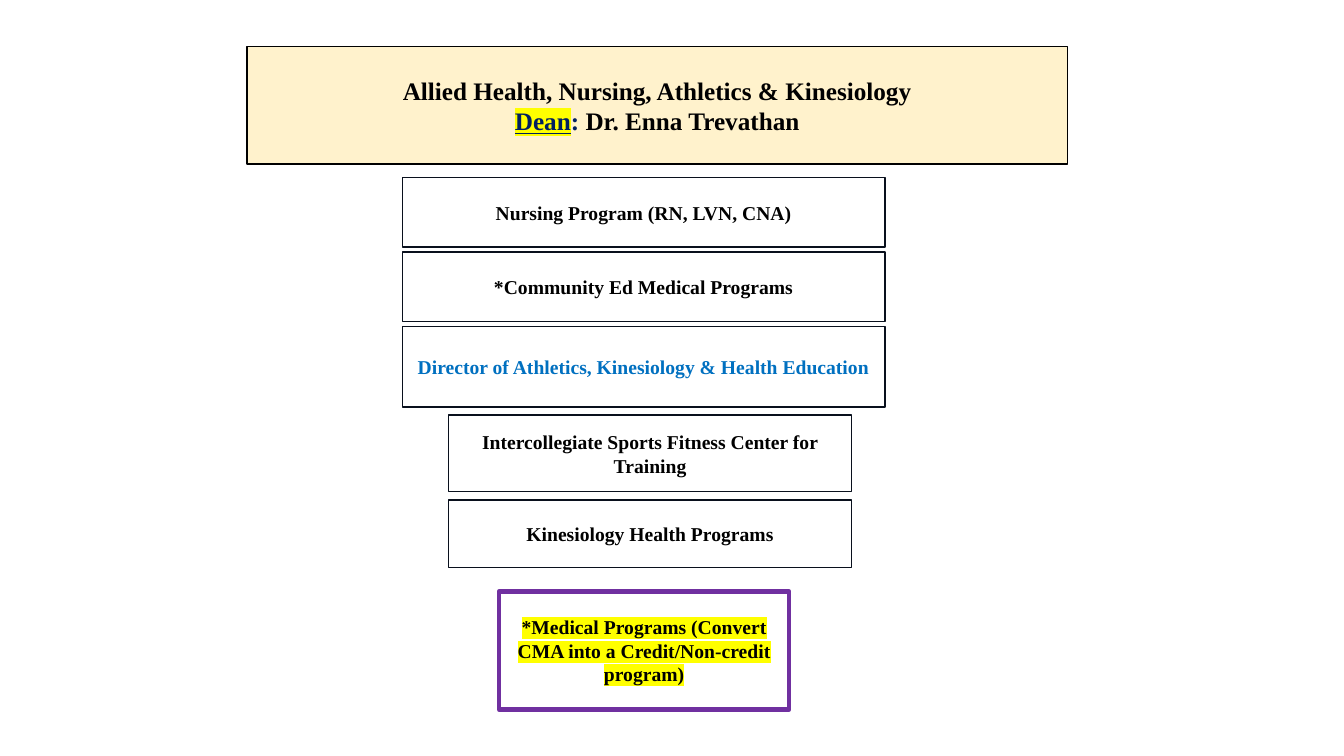
import pptx
import pptx.util
import pptx.dml.color
import pptx.enum.shapes
import pptx.enum.text
import pptx.oxml
import pptx.oxml.ns

Pt = pptx.util.Pt
RGBColor = pptx.dml.color.RGBColor

BLACK = RGBColor(0, 0, 0)
WHITE = RGBColor(255, 255, 255)
CREAM = RGBColor(0xFF, 0xF2, 0xCC)
NAVY = RGBColor(0x00, 0x20, 0x60)
BLUE = RGBColor(0x00, 0x70, 0xC0)
PURPLE = RGBColor(0x70, 0x30, 0xA0)
INK = RGBColor(0x09, 0x10, 0x1D)
YELLOW = RGBColor(0xFF, 0xFF, 0x00)

HEADER = [
    [("Allied Health, Nursing, Athletics & Kinesiology", BLACK, False)],
    [("Dean", NAVY, True), (":", NAVY, False), (" Dr. Enna Trevathan", BLACK, False)],
]
PROGRAMS = [
    ("Nursing Program (RN, LVN, CNA)", "area", 126.7, 49.7, BLACK),
    ("*Community Ed Medical Programs", "area", 180, 49.7, BLACK),
    ("Director of Athletics, Kinesiology & Health Education", "area", 233.3, 57.6, BLUE),
    ("Intercollegiate Sports Fitness Center for Training", "unit", 296.6, 54.7, BLACK),
    ("Kinesiology Health Programs", "unit", 357.1, 48.2, BLACK),
    ("*Medical Programs (Convert CMA into a Credit/Non-credit program)",
     "proposal", 422.6, 84.2, BLACK),
]
LEVELS = {
    "header": (176.4, 586.1, CREAM, BLACK, 1),
    "area": (287.3, 344.9, WHITE, INK, 1),
    "unit": (320.4, 288, WHITE, INK, 1),
    "proposal": (356.4, 207.4, WHITE, PURPLE, 3),
}


def set_all(target, values):
    for name, value in values.items():
        setattr(target, name, value)


def highlight(span):
    mark = pptx.oxml.parse_xml(
        f'<a:highlight {pptx.oxml.ns.nsdecls("a")}><a:srgbClr val="{YELLOW}"/></a:highlight>')
    span.font.fill._xPr.find(pptx.oxml.ns.qn("a:solidFill")).addnext(mark)


def format_box(box, level, top, height, lines, size):
    left, width, fill, edge, weight = LEVELS[level]
    set_all(box, {"left": Pt(left), "top": Pt(top), "width": Pt(width), "height": Pt(height)})
    box.fill.solid()
    box.fill.fore_color.rgb = fill
    box.line.color.rgb = edge
    box.line.width = Pt(weight)
    frame = box.text_frame
    set_all(frame, {"word_wrap": True,
                    "auto_size": pptx.enum.text.MSO_AUTO_SIZE.NONE,
                    "vertical_anchor": pptx.enum.text.MSO_ANCHOR.MIDDLE})
    for index, line in enumerate(lines):
        para = frame.add_paragraph() if index else frame.paragraphs[0]
        para.alignment = pptx.enum.text.PP_ALIGN.CENTER
        for text, color, marked, *underline in line:
            span = para.add_run()
            span.text = text
            set_all(span.font, {"name": "Times New Roman", "size": Pt(size), "bold": True,
                                "underline": marked and level == "header"})
            span.font.color.rgb = color
            if marked:
                highlight(span)


deck = pptx.Presentation()
deck.slide_width, deck.slide_height = Pt(960), Pt(540)
page = deck.slides.add_slide(deck.slide_layouts[5])
format_box(page.shapes.title, "header", 33.1, 84.2, HEADER, 18)
for text, level, top, height, color in PROGRAMS:
    box = page.shapes.add_shape(pptx.enum.shapes.MSO_SHAPE.RECTANGLE, 0, 0, 0, 0)
    box.shadow.inherit = False
    format_box(box, level, top, height, [[(text, color, level == "proposal")]], 14)

deck.save("out.pptx")
